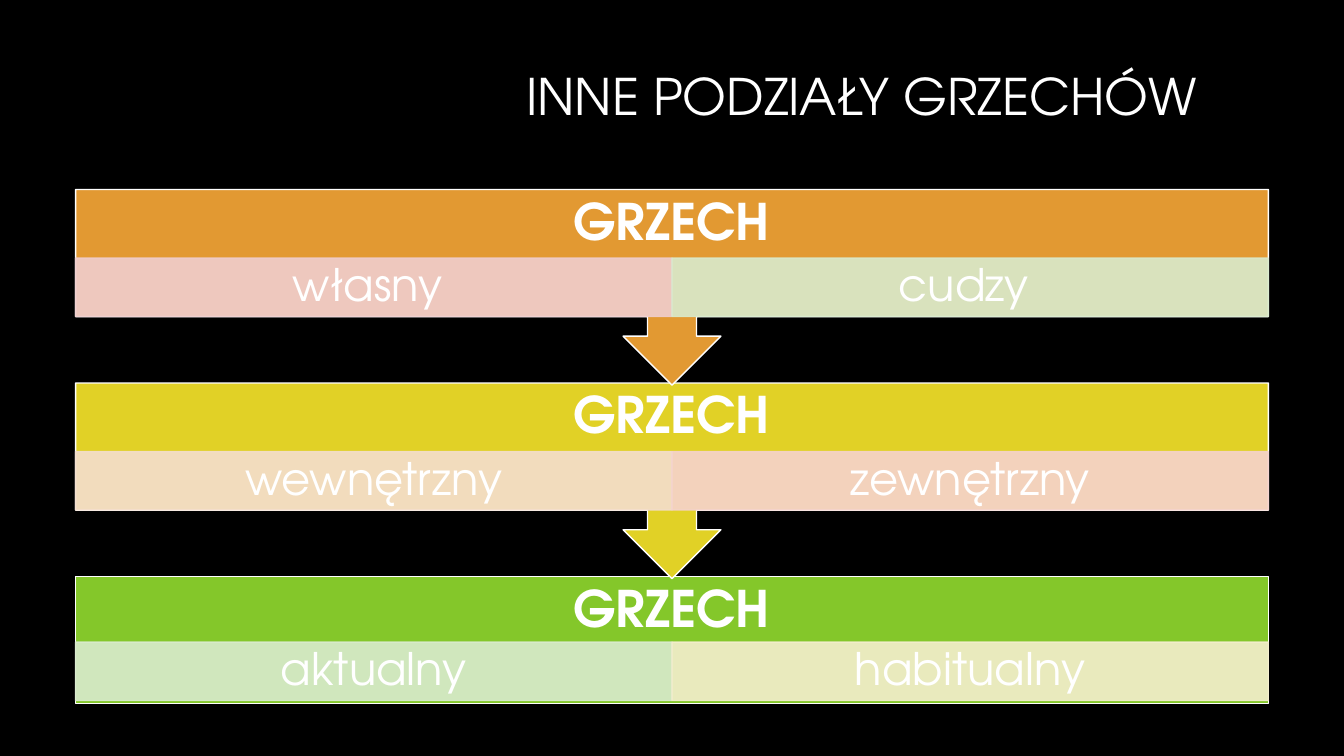
"""Build a slide of three stacked divisions of sin, linked by arrow callouts."""
from dataclasses import dataclass

from pptx import Presentation
from pptx.dml.color import RGBColor
from pptx.enum.shapes import MSO_SHAPE
from pptx.enum.text import MSO_ANCHOR, PP_ALIGN
from pptx.oxml.ns import qn
from pptx.shapes.autoshape import Shape
from pptx.slide import Slide
from pptx.util import Inches, Pt

RECT = MSO_SHAPE.RECTANGLE
CALLOUT = MSO_SHAPE.UP_ARROW_CALLOUT
MIDDLE = MSO_ANCHOR.MIDDLE
CENTER = PP_ALIGN.CENTER
RIGHT = PP_ALIGN.RIGHT

FONT = "TeX Gyre Adventor"
COLORS = {
    "background": "000000",
    "white": "FFFFFF",
    "orange": "E29932",
    "yellow": "E1D126",
    "green": "84C72A",
    "pale_rose": "F0CECE",
    "pale_green": "D9EBCD",
    "pale_orange": "F4DECE",
    "pale_red": "F5D3CD",
    "pale_yellow": "F4EECD",
}

LEFT, TOP, WIDTH, PITCH = 0.75, 1.88, 11.83, 1.92
HEADER_H, CELL_H = 0.68, 0.58
CELL_W = WIDTH / 2


@dataclass(frozen=True)
class Cell:
    text: str
    color: str


@dataclass(frozen=True)
class Division:
    color: str
    cells: tuple[Cell, Cell]
    height: float = 1.94
    cell_offset: float = HEADER_H
    has_arrow: bool = True


DIVISIONS = (
    Division("orange", (Cell("własny ", "pale_rose"), Cell("cudzy ", "pale_green"))),
    Division("yellow", (Cell("wewnętrzny", "pale_orange"), Cell("zewnętrzny", "pale_red"))),
    Division("green", (Cell("aktualny", "pale_green"), Cell("habitualny", "pale_yellow")),
             height=1.26, cell_offset=0.65, has_arrow=False),
)


def rgb(name: str) -> RGBColor:
    return RGBColor.from_string(COLORS[name])


def add_block(slide: Slide, kind: MSO_SHAPE, x: float, y: float, w: float, h: float,
              fill: str, line: str) -> Shape:
    s = slide.shapes.add_shape(kind, Inches(x), Inches(y), Inches(w), Inches(h))
    s.shadow.inherit = False
    s.fill.solid()
    s.fill.fore_color.rgb = rgb(fill)
    s.line.color.rgb = rgb(line)
    s.line.width = Pt(1)
    return s


def set_alpha(s: Shape, percent: int) -> None:
    for color in s._element.spPr.iter(qn("a:srgbClr")):
        alpha = color.makeelement(qn("a:alpha"), {"val": str(percent * 1000)})
        color.append(alpha)


def write(s: Shape, text: str, size: int, align: PP_ALIGN = CENTER,
          bold: bool = False) -> None:
    tf = s.text_frame
    tf.word_wrap = True
    tf.vertical_anchor = MIDDLE
    tf.margin_top = tf.margin_bottom = Inches(0.04)
    p = tf.paragraphs[0]
    p.alignment = align
    p.line_spacing = 0.9
    r = p.add_run()
    r.text = text
    r.font.name = FONT
    r.font.size = Pt(size)
    r.font.bold = bold
    r.font.color.rgb = rgb("white")


def add_text(slide: Slide, text: str, x: float, y: float, w: float, h: float,
             align: PP_ALIGN = CENTER, bold: bool = False) -> None:
    s = slide.shapes.add_textbox(Inches(x), Inches(y), Inches(w), Inches(h))
    write(s, text, 36, align, bold)


def add_division(slide: Slide, division: Division, top: float) -> None:
    kind = CALLOUT if division.has_arrow else RECT
    s = add_block(slide, kind, LEFT, top, WIDTH, division.height, division.color, "white")
    if division.has_arrow:
        s.rotation = 180
    add_text(slide, "GRZECH", LEFT, top, WIDTH, HEADER_H, bold=True)
    for col, cell in enumerate(division.cells):
        s = add_block(slide, RECT, LEFT + col * CELL_W, top + division.cell_offset,
                      CELL_W, CELL_H, cell.color, cell.color)
        set_alpha(s, 90)
        write(s, cell.text, 32)


def main() -> None:
    prs = Presentation()
    prs.slide_width, prs.slide_height = Inches(13.33), Inches(7.5)
    slide = prs.slides.add_slide(prs.slide_layouts[6])
    slide.background.fill.solid()
    slide.background.fill.fore_color.rgb = rgb("background")
    add_text(slide, "INNE PODZIAŁY GRZECHÓW", 3.17, 0.66, 8.8, 0.64, align=RIGHT)
    for row, division in reversed(list(enumerate(DIVISIONS))):
        add_division(slide, division, TOP + row * PITCH)
    prs.save("out.pptx")


if __name__ == "__main__":
    main()
